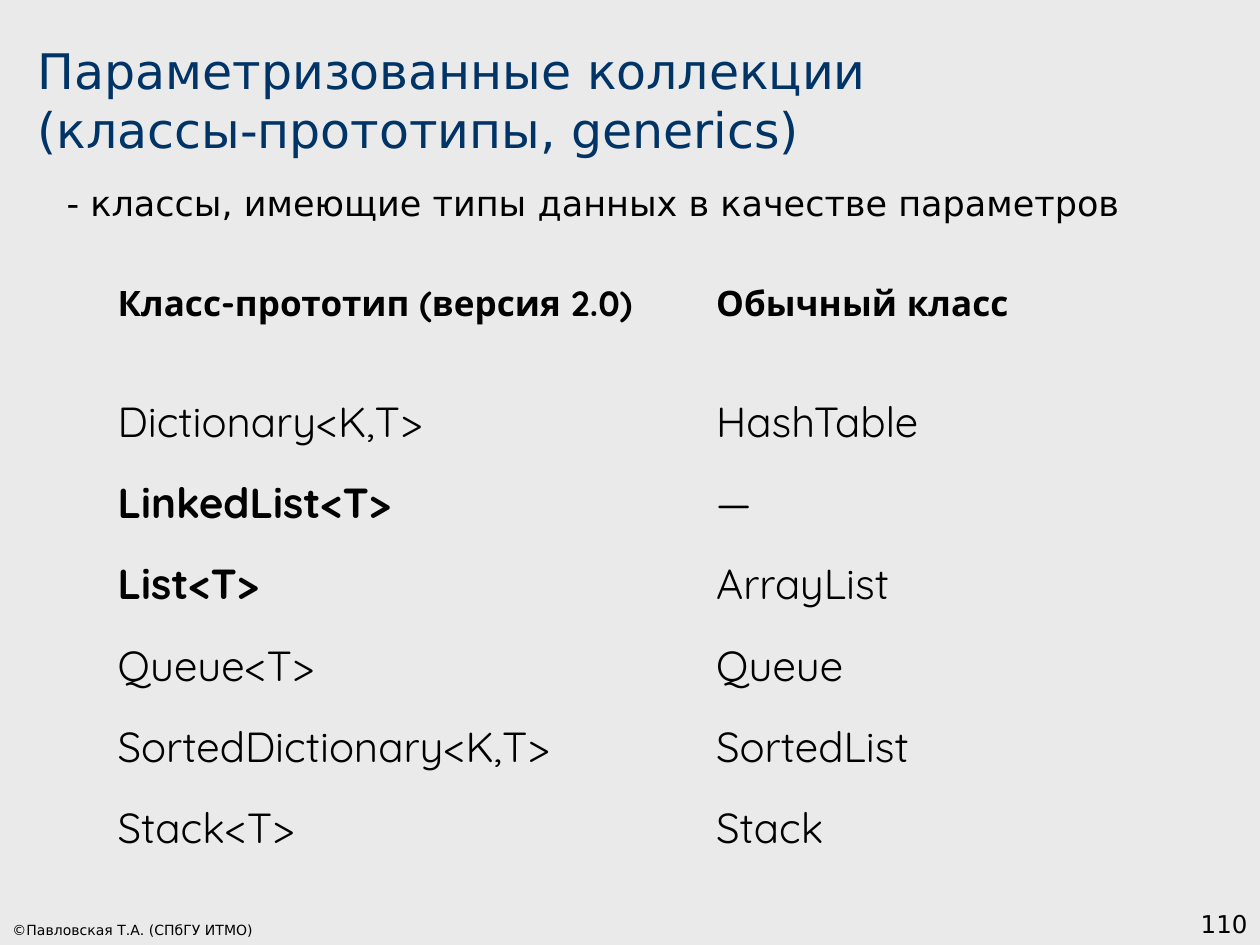
from pptx import Presentation
from pptx.dml.color import RGBColor
from pptx.enum.text import MSO_ANCHOR, MSO_AUTO_SIZE, PP_ALIGN
from pptx.util import Pt

# Content
TITLE = "Параметризованные коллекции\v(классы-прототипы, generics)"
DEFINITION = "- классы, имеющие типы данных в качестве параметров"
COPYRIGHT = "©Павловская Т.А. (СПбГУ ИТМО)"
PAGE_NUMBER = "110"
HEADINGS = ("Класс-прототип (версия 2.0)", "Обычный класс")
CLASSES = [
    ("Dictionary<K,T>", "HashTable"),
    ("LinkedList<T>", "—"),
    ("List<T>", "ArrayList"),
    ("Queue<T>", "Queue"),
    ("SortedDictionary<K,T>", "SortedList"),
    ("Stack<T>", "Stack"),
]
BOLD_CLASSES = {"LinkedList<T>", "List<T>"}

# Look
COLORS = {"background": "EAEAEA", "title": "003366", "text": "000000"}
TEXT_FONT, TABLE_FONT = "DejaVu Sans", "Quicksand"
HANGING = Pt(27)
COLUMN_WIDTHS = (342, 207)
HEADING_HEIGHT, GAP_HEIGHT, CLASS_HEIGHT = 43.2, 22, 46.5
PLAIN_TABLE_STYLE = "{2D5ABB26-0587-4C30-8999-92F81FD0307C}"


def format_paragraph(paragraph, size, name=TEXT_FONT, color="text", bold=False):
    font = paragraph.font
    font.size, font.name, font.bold = Pt(size), name, bold
    font.color.rgb = RGBColor.from_string(COLORS[color])


def hang(paragraph):
    properties = paragraph._p.get_or_add_pPr()
    properties.set("marL", str(HANGING))
    properties.set("indent", str(-HANGING))


def add_text(slide, text, box, size, anchor=MSO_ANCHOR.BOTTOM, align=PP_ALIGN.LEFT):
    frame = slide.shapes.add_textbox(*map(Pt, box)).text_frame
    frame.word_wrap = True
    frame.vertical_anchor = anchor
    paragraph = frame.paragraphs[0]
    paragraph.text = text
    paragraph.alignment = align
    format_paragraph(paragraph, size)
    return paragraph


def add_class_table(slide):
    rows = [(HEADINGS, HEADING_HEIGHT, 20), (("", ""), GAP_HEIGHT, 8)]
    rows += [(names, CLASS_HEIGHT, 24) for names in CLASSES]
    height = sum(row[1] for row in rows)
    box = (60, 157, sum(COLUMN_WIDTHS), height)
    table = slide.shapes.add_table(len(rows), len(COLUMN_WIDTHS), *map(Pt, box)).table
    table.first_row = table.horz_banding = False
    table._tbl.tblPr[0].text = PLAIN_TABLE_STYLE
    for column, width in zip(table.columns, COLUMN_WIDTHS):
        column.width = Pt(width)
    for row, (texts, row_height, size) in zip(table.rows, rows):
        row.height = Pt(row_height)
        for cell, text in zip(row.cells, texts):
            cell.fill.background()
            paragraph = cell.text_frame.paragraphs[0]
            paragraph.text = text
            hang(paragraph)
            bold = text in HEADINGS or text in BOLD_CLASSES
            format_paragraph(paragraph, size, TABLE_FONT, bold=bold)


def main():
    presentation = Presentation()
    presentation.slide_width, presentation.slide_height = Pt(720), Pt(540)
    slide = presentation.slides.add_slide(presentation.slide_layouts[5])
    fill = slide.background.fill
    fill.solid()
    fill.fore_color.rgb = RGBColor.from_string(COLORS["background"])

    # Footer
    add_text(slide, COPYRIGHT, (0, 520, 224, 20), 8)
    add_text(slide, PAGE_NUMBER, (570, 504, 150, 36), 14, align=PP_ALIGN.RIGHT)

    # Title
    title = slide.shapes.title
    title.left, title.top, title.width, title.height = map(Pt, (14.4, 20, 675, 74))
    frame = title.text_frame
    frame.text = TITLE
    frame.word_wrap = True
    frame.auto_size = MSO_AUTO_SIZE.NONE
    frame.vertical_anchor = MSO_ANCHOR.BOTTOM
    frame.paragraphs[0].alignment = PP_ALIGN.LEFT
    format_paragraph(frame.paragraphs[0], 28, color="title")

    # Definition
    definition = add_text(slide, DEFINITION, (31, 100, 641, 45), 20, MSO_ANCHOR.TOP)
    hang(definition)

    # Generic classes and their ordinary counterparts
    add_class_table(slide)

    presentation.save("out.pptx")


if __name__ == "__main__":
    main()
